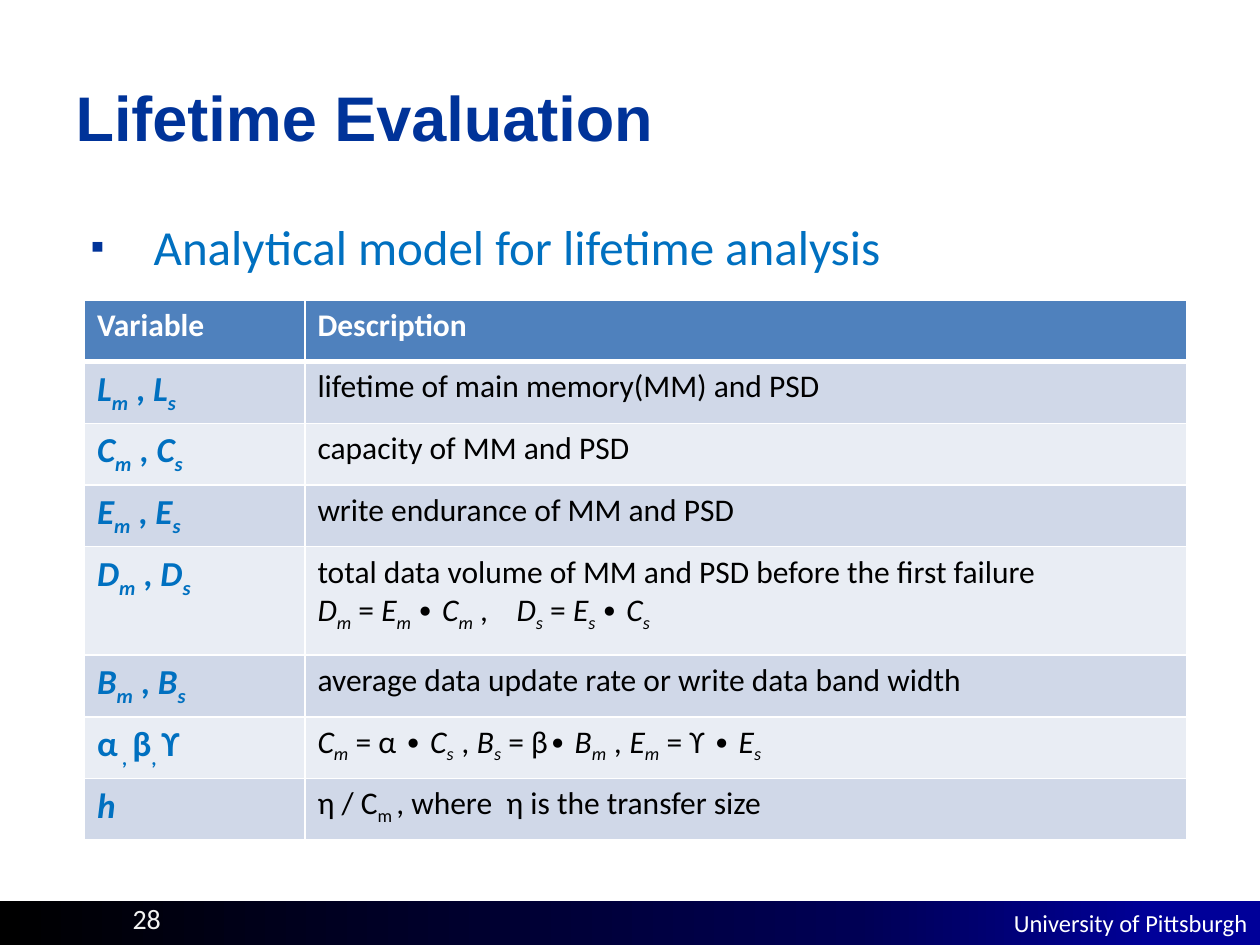
from lxml.etree import SubElement
from pptx import Presentation
from pptx.dml.color import RGBColor
from pptx.enum.shapes import MSO_SHAPE
from pptx.enum.text import MSO_ANCHOR, PP_ALIGN
from pptx.oxml.ns import qn
from pptx.util import Emu, Inches, Pt

TITLE = "Lifetime Evaluation"
POINT = "Analytical model for lifetime analysis"
SCHOOL = "University of Pittsburgh"
PAGE = "28"
HEAD = ("Variable", "Description")
# ~ turns italics on or off, _ turns subscript on or off
ROWS = [
    ("~L_m_~ , ~L_s", ["lifetime of main memory(MM) and PSD"]),
    ("~C_m_~ , ~C_s", ["capacity of MM and PSD"]),
    ("~E_m_~ , ~E_s", ["write endurance of MM and PSD"]),
    ("~D_m_~ , ~D_s", [
        "total data volume of MM and PSD before the first failure",
        "~D_m_~ = ~E_m _∙ C_m_~ ,\t~D_s_~ = ~E_s _~∙ ~C_s"]),
    ("~B_m_~ , ~B_s", ["average data update rate or write data band width"]),
    ("α~_ , _~β_, _ϒ",
     ["~C_m_~ = α ~∙ C_s  _, B_s_~ = β~∙ B_m  _, E_m_~ = ϒ ~∙ E_s"]),
    ("~h", ["η / C_m _, where  η is the transfer size"]),
]
COLS = (1.75, 7)
ROW, TALL = 0.49, 0.86
GRAD = ((0, "000000"), (68, "000054"), (92, "000099"))
NAVY, BLUE, WHITE = "003399", "0070C0", "FFFFFF"
HEADER, BANDS = "4F81BD", ("D0D8E8", "E9EDF4")


def rgb(code):
    return RGBColor.from_string(code)


def add_run(para, text, size, color, bold=False, face="Calibri"):
    run = para.add_run()
    run.text = text
    font = run.font
    font.size, font.bold, font.name = Pt(size), bold, face
    font.color.rgb = rgb(color)
    return run


def add_marked(para, text, size, color, bold=False):
    """Add one run for each stretch between the ~ and _ marks."""
    slant = sub = False
    part = ""
    for char in text + "~":
        if char not in "~_":
            part += char
            continue
        if part:
            run = add_run(para, part, size, color, bold)
            run.font.italic = slant
            if sub:
                run.font._element.set("baseline", "-25000")
            part = ""
        if char == "~":
            slant = not slant
        else:
            sub = not sub


def add_tab(para, inches):
    tabs = SubElement(para._p.get_or_add_pPr(), qn("a:tabLst"))
    SubElement(tabs, qn("a:tab"), pos=str(Inches(inches)), algn="l")


def add_bullet(para):
    props = para._p.get_or_add_pPr()
    props.set("marL", str(Inches(0.62)))
    props.set("indent", str(Inches(-0.5)))
    tint = SubElement(props, qn("a:buClr"))
    SubElement(tint, qn("a:srgbClr"), val=NAVY)
    SubElement(props, qn("a:buSzPct"), val="80000")
    SubElement(props, qn("a:buFont"), typeface="Arial")
    SubElement(props, qn("a:buChar"), char="▪")


def style_cell(cell, row):
    """Draw the white borders first, then the fill, as the schema orders."""
    props = cell._tc.get_or_add_tcPr()
    thick = {0: "B", 1: "T"}.get(row)
    for side in "LRTB":
        width = Pt(3 if side == thick else 1)
        line = SubElement(props, qn(f"a:ln{side}"), w=str(width))
        paint = SubElement(line, qn("a:solidFill"))
        SubElement(paint, qn("a:srgbClr"), val=WHITE)
    cell.fill.solid()
    cell.fill.fore_color.rgb = rgb(BANDS[(row - 1) % 2] if row else HEADER)


def place(shape, *box):
    shape.left, shape.top, shape.width, shape.height = map(Inches, box)


def add_footer(slide):
    bar = slide.shapes.add_shape(
        MSO_SHAPE.RECTANGLE, Emu(0), Inches(7.15), Inches(10), Inches(0.35))
    bar.shadow.inherit = False
    bar.line.fill.background()
    bar.fill.gradient()
    bar.fill.gradient_angle = 0
    stops = bar._element.spPr.find(".//" + qn("a:gsLst"))
    for stop in list(stops):
        stops.remove(stop)
    for pos, color in GRAD:
        stop = SubElement(stops, qn("a:gs"), pos=str(pos * 1000))
        SubElement(stop, qn("a:srgbClr"), val=color)
    number = slide.shapes.add_textbox(
        Emu(0), Inches(7.09), Inches(2.33), Inches(0.4))
    for shape, text, size, color, align, wrap in (
            (bar, SCHOOL, 14, WHITE, PP_ALIGN.RIGHT, False),
            (number, PAGE, 16, "F2F2F2", PP_ALIGN.CENTER, True)):
        frame = shape.text_frame
        frame.word_wrap = wrap
        frame.vertical_anchor = MSO_ANCHOR.MIDDLE
        para = frame.paragraphs[0]
        para.alignment = align
        add_run(para, text, size, color)


def add_grid(slide):
    heights = [ROW] + [TALL if len(desc) > 1 else ROW for _, desc in ROWS]
    grid = slide.shapes.add_table(
        len(heights), len(COLS), Inches(0.67), Inches(2.38),
        Inches(sum(COLS)), Inches(sum(heights))).table
    for col, width in zip(grid.columns, COLS):
        col.width = Inches(width)
    for row, height in zip(grid.rows, heights):
        row.height = Inches(height)
    for row in range(len(heights)):
        for col in range(len(COLS)):
            style_cell(grid.cell(row, col), row)
    for col, text in enumerate(HEAD):
        para = grid.cell(0, col).text_frame.paragraphs[0]
        add_run(para, text, 18, WHITE, True)
    for row, (name, desc) in enumerate(ROWS, 1):
        para = grid.cell(row, 0).text_frame.paragraphs[0]
        add_marked(para, name, 20, BLUE, True)
        frame = grid.cell(row, 1).text_frame
        for num, text in enumerate(desc):
            para = frame.add_paragraph() if num else frame.paragraphs[0]
            if "\t" in text:
                add_tab(para, 1.58)
            add_marked(para, text, 18, "000000")


def main():
    deck = Presentation()
    deck.slide_width, deck.slide_height = Inches(10), Inches(7.5)
    slide = deck.slides.add_slide(deck.slide_layouts[1])
    add_footer(slide)

    title, body = slide.placeholders
    place(title, 0.5, 0.3, 9, 1.25)
    title.text_frame.vertical_anchor = MSO_ANCHOR.MIDDLE
    para = title.text_frame.paragraphs[0]
    para.alignment = PP_ALIGN.LEFT
    add_run(para, TITLE, 36, NAVY, True, "Arial")

    place(body, 0.5, 1.67, 9, 4.95)
    para = body.text_frame.paragraphs[0]
    para.level = 1
    para.space_before = Pt(0)
    add_bullet(para)
    add_run(para, POINT, 28, BLUE)

    add_grid(slide)
    deck.save("out.pptx")


if __name__ == "__main__":
    main()
